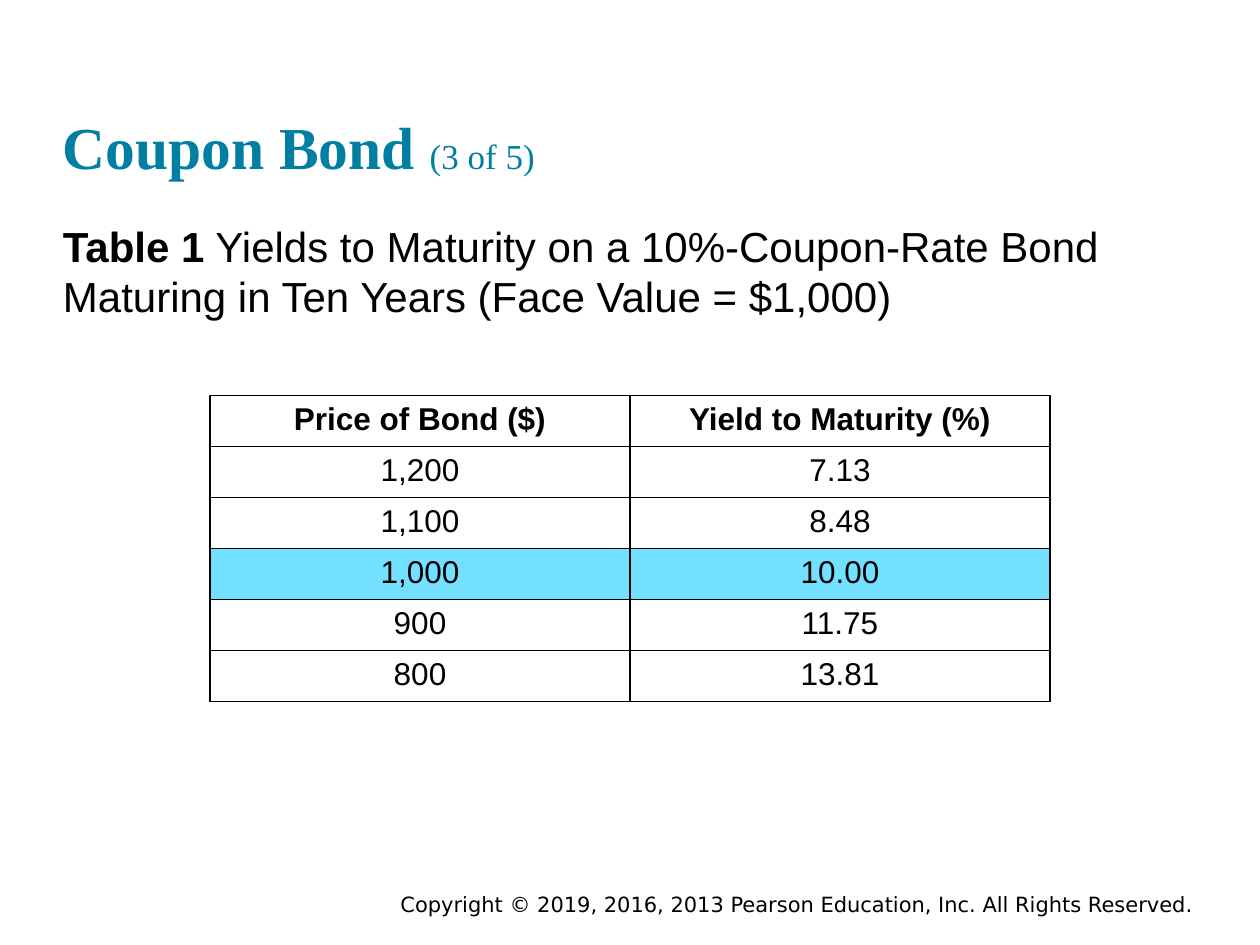
"""Build the coupon bond slide with its table of yields to maturity."""
from lxml import etree
from pptx import Presentation
from pptx.dml.color import RGBColor
from pptx.enum.text import MSO_ANCHOR, PP_ALIGN
from pptx.oxml.ns import qn
from pptx.util import Inches, Pt

LEFT, CENTER = PP_ALIGN.LEFT, PP_ALIGN.CENTER
TOP, BOTTOM = MSO_ANCHOR.TOP, MSO_ANCHOR.BOTTOM

COLORS = {"title": "007FA3", "text": "000000", "border": "000000",
          "plain": "FFFFFF", "par": "74E0FF"}

TITLE = [("Coupon Bond ", 34, True), ("(3 of 5)", 20, False)]
CAPTION = [
    ("Table 1", 24, True),
    (" Yields to Maturity on a 10%-Coupon-Rate Bond Maturing in Ten Years"
     " (Face Value = $1,000)", 24, False),
]
COPYRIGHT = [("Copyright © 2019, 2016, 2013 Pearson Education, Inc. "
              "All Rights Reserved.", 12, False)]
YIELDS = [
    ("Price of Bond ($)", "Yield to Maturity (%)"),
    ("1,200", "7.13"),
    ("1,100", "8.48"),
    ("1,000", "10.00"),
    ("900", "11.75"),
    ("800", "13.81"),
]
PAR_ROW = 3

WIDTH, HEIGHT = Inches(10), Inches(7.5)
MARGIN = WIDTH // 20
CONTENT_WIDTH = WIDTH - 2 * MARGIN
COLUMN_WIDTH = WIDTH // 3
ROW_HEIGHT = Inches(0.405)


def write(frame, runs, font="Arial", color="text", align=LEFT):
    paragraph = frame.paragraphs[0]
    paragraph.alignment = align
    for text, size, bold in runs:
        run = paragraph.add_run()
        run.text = text
        run.font.name = font
        run.font.size = Pt(size)
        run.font.bold = bold
        run.font.color.rgb = RGBColor.from_string(COLORS[color])


def add_text(slide, box, runs, inset=True, anchor=TOP, **style):
    frame = slide.shapes.add_textbox(*box).text_frame
    frame.word_wrap = True
    frame.vertical_anchor = anchor
    if not inset:
        frame.margin_left = frame.margin_right = 0
        frame.margin_top = frame.margin_bottom = 0
    write(frame, runs, **style)


def add_borders(cell):
    properties = cell._tc.get_or_add_tcPr()
    for side in ("lnL", "lnR", "lnT", "lnB"):
        border = etree.SubElement(properties, qn(f"a:{side}"), w=str(Pt(1)))
        fill = etree.SubElement(border, qn("a:solidFill"))
        etree.SubElement(fill, qn("a:srgbClr"), val=COLORS["border"])


def add_yields(slide):
    rows, columns = len(YIELDS), len(YIELDS[0])
    table_width = columns * COLUMN_WIDTH
    table = slide.shapes.add_table(
        rows, columns, (WIDTH - table_width) // 2, Inches(3.14),
        table_width, rows * ROW_HEIGHT).table
    table.horz_banding = False
    for r, values in enumerate(YIELDS):
        for c, value in enumerate(values):
            cell = table.cell(r, c)
            add_borders(cell)
            cell.fill.solid()
            shade = COLORS["par" if r == PAR_ROW else "plain"]
            cell.fill.fore_color.rgb = RGBColor.from_string(shade)
            write(cell.text_frame, [(value, 18, r == 0)], align=CENTER)


def main():
    deck = Presentation()
    deck.slide_width, deck.slide_height = WIDTH, HEIGHT
    slide = deck.slides.add_slide(deck.slide_layouts[6])
    add_text(slide, (Inches(2.95), Inches(7.03), Inches(6.75), Inches(0.3)),
             COPYRIGHT, font="DejaVu Sans", align=CENTER)
    add_text(slide, (MARGIN, Inches(0.24), CONTENT_WIDTH, Inches(1.2)),
             TITLE, inset=False, anchor=BOTTOM, font="Times New Roman", color="title")
    add_text(slide, (MARGIN, Inches(1.75), CONTENT_WIDTH, Inches(0.83)),
             CAPTION, inset=False)
    add_yields(slide)
    deck.save("out.pptx")


if __name__ == "__main__":
    main()
